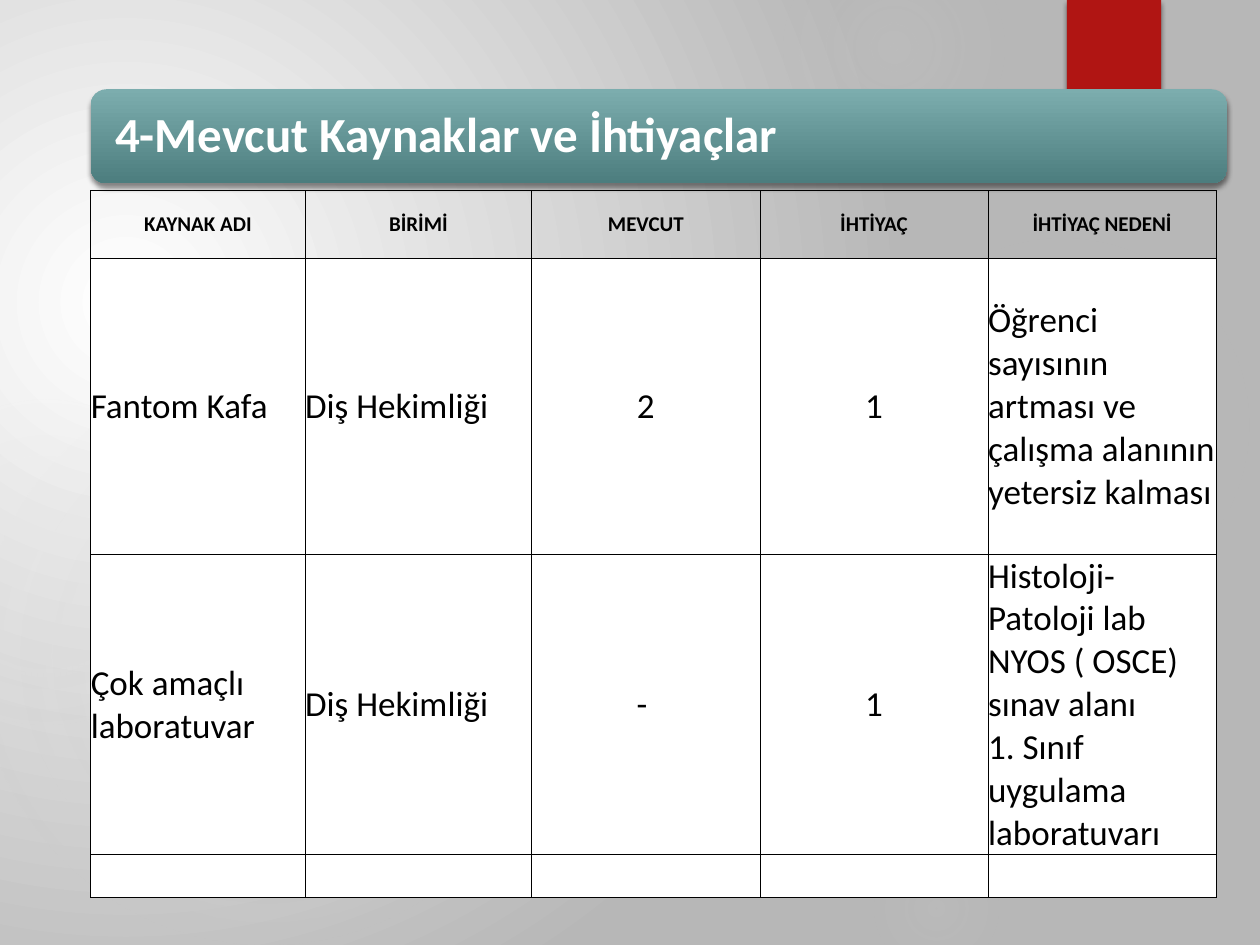
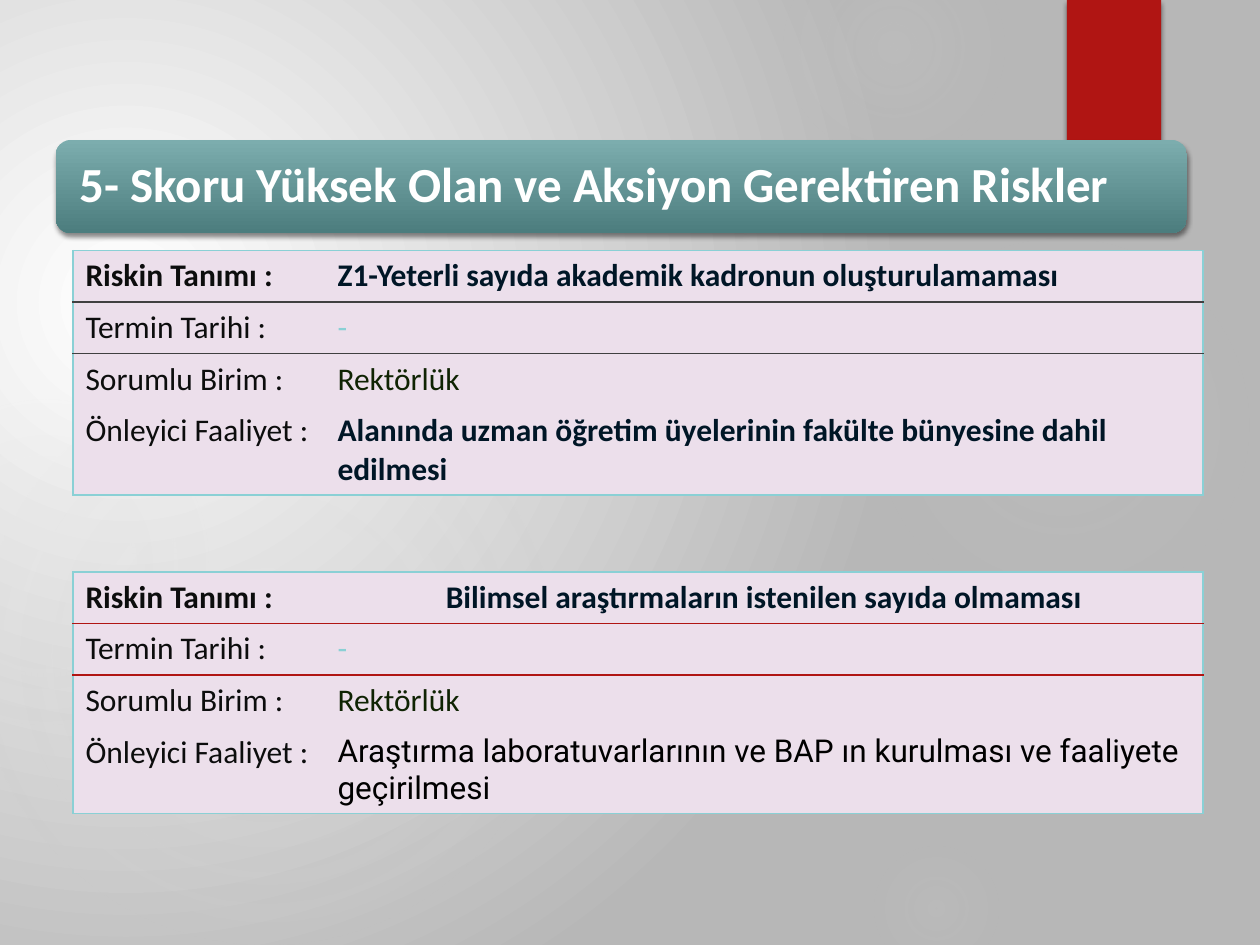
"""Build two slides: resources and needs, and the risks that call for action."""
from pptx import Presentation
from pptx.dml.color import RGBColor
from pptx.enum.shapes import MSO_SHAPE
from pptx.enum.text import MSO_ANCHOR, PP_ALIGN
from pptx.oxml import parse_xml
from pptx.oxml.ns import nsdecls, qn
from pptx.util import Cm, Pt

COLORS = {
    "white": "FFFFFF", "gray": "B7B7B7", "glow": "D9D9D9", "red": "B01513",
    "teal": "7CADAE", "deep_teal": "4C7D7E", "black": "000000", "ink": "0C0D0D",
    "navy": "001626", "green": "0F2303", "aqua": "8AD0D5", "lilac": "ECDFEB",
    "charcoal": "404040",
}
FONT = "Calibri"
NO_STYLE = "{2D5ABB26-0587-4C30-8999-92F81FD0307C}"
CENTER = '<a:path path="circle"><a:fillToRect l="50000" t="50000" r="50000" b="50000"/></a:path>'
CORNER = '<a:path path="circle"><a:fillToRect l="45000" t="65000" r="125000" b="100000"/></a:path>'
DOWN = '<a:lin ang="5400000" scaled="0"/>'


def paint_gradient(fill, root, stops, shade):
    """Give a fill a gradient of (position, colour, opacity) stops."""
    fill.gradient()
    old = root.find(".//" + qn("a:gradFill"))
    gs = "".join(
        f'<a:gs pos="{pos * 1000}"><a:srgbClr val="{COLORS[color]}">'
        f'<a:alpha val="{alpha * 1000}"/></a:srgbClr></a:gs>'
        for pos, color, alpha in stops)
    old.getparent().replace(old, parse_xml(
        f'<a:gradFill {nsdecls("a")} rotWithShape="1"><a:gsLst>{gs}</a:gsLst>{shade}</a:gradFill>'))


def write_cell(cell, text, size, color, bold, edges, width, fill=None, font=FONT, align=None):
    """Set the borders, fill and text of a table cell."""
    tcPr = cell._tc.get_or_add_tcPr()
    for side in "LRTB":
        if side in edges:
            tcPr.append(parse_xml(
                f'<a:ln{side} {nsdecls("a")} w="{Pt(width)}"><a:solidFill>'
                f'<a:srgbClr val="{COLORS[edges[side]]}"/></a:solidFill></a:ln{side}>'))
    if fill:
        cell.fill.solid()
        cell.fill.fore_color.rgb = RGBColor.from_string(COLORS[fill])
    else:
        cell.fill.background()
    cell.text_frame.text = text
    for p in cell.text_frame.paragraphs:
        p.alignment = align
        for r in p.runs:
            r.font.name, r.font.size, r.font.bold = font, Pt(size), bold
            r.font.color.rgb = RGBColor.from_string(COLORS[color])


prs = Presentation()
prs.slide_width, prs.slide_height = Cm(25.4), Cm(19.05)

glows = [
    (17.5, 4.65, 7.82, ((0, 7), (36, 6), (69, 0))),
    (15.8, -1.27, 4.45, ((0, 14), (36, 7), (73, 0))),
    (17.5, 16.94, 2.74, ((0, 9), (36, 5), (66, 0))),
    (-0.43, 7.42, 11.63, ((0, 11), (36, 10), (75, 0))),
    (-2.34, 8.05, 6.55, ((0, 8), (36, 8), (72, 0))),
]
banners = [
    ("4-Mevcut Kaynaklar ve İhtiyaçlar", 1.83, 1.8, 22.91, 1.9),
    ("5- Skoru Yüksek Olan ve Aksiyon Gerektiren Riskler", 1.12, 2.82, 22.81, 1.88),
]
slides = []
for title, left, top, width, height in banners:
    s = prs.slides.add_slide(prs.slide_layouts[6])
    slides.append(s)
    paint_gradient(s.background.fill, s._element,
                   [(0, "white", 100), (100, "gray", 100)], CORNER)

    for x, y, size, stops in glows:
        sp = s.shapes.add_shape(MSO_SHAPE.OVAL, Cm(x), Cm(y), Cm(size), Cm(size))
        sp.shadow.inherit = False
        sp.line.fill.background()
        paint_gradient(sp.fill, sp._element, [(pos, "glow", alpha) for pos, alpha in stops], CENTER)

    tab = s.shapes.add_shape(MSO_SHAPE.RECTANGLE, Cm(21.51), 0, Cm(1.9), Cm(3.05))
    tab.fill.solid()
    tab.fill.fore_color.rgb = RGBColor.from_string(COLORS["red"])
    banner = s.shapes.add_shape(MSO_SHAPE.ROUNDED_RECTANGLE, Cm(left), Cm(top), Cm(width), Cm(height))
    paint_gradient(banner.fill, banner._element,
                   [(0, "teal", 100), (100, "deep_teal", 100)], DOWN)
    for sp in (tab, banner):
        sp.line.fill.background()
        sp.shadow.inherit = False
        sp._element.spPr.find(qn("a:effectLst")).append(parse_xml(
            f'<a:outerShdw {nsdecls("a")} blurRad="{Pt(3)}" dist="{Pt(2)}" dir="5400000" rotWithShape="0">'
            f'<a:srgbClr val="{COLORS["black"]}"><a:alpha val="45000"/></a:srgbClr></a:outerShdw>'))

    tf = banner.text_frame
    tf.word_wrap = True
    tf.vertical_anchor = MSO_ANCHOR.MIDDLE
    tf.margin_left = tf.margin_right = Cm(0.4)
    tf.text = title
    p = tf.paragraphs[0]
    p.alignment = PP_ALIGN.LEFT
    p.line_spacing = 0.9
    r = p.runs[0]
    r.font.name, r.font.size, r.font.bold = FONT, Pt(28), True
    r.font.color.rgb = RGBColor.from_string(COLORS["white"])

resources = [
    ("KAYNAK ADI", "BİRİMİ", "MEVCUT", "İHTİYAÇ", "İHTİYAÇ NEDENİ"),
    ("Fantom Kafa", "Diş Hekimliği", "2", "1",
     "Öğrenci sayısının artması ve çalışma alanının yetersiz kalması"),
    ("Çok amaçlı laboratuvar", "Diş Hekimliği", "- ", "1",
     "Histoloji- Patoloji lab\nNYOS ( OSCE) sınav alanı\n1. Sınıf uygulama laboratuvarı"),
    ("",) * 5,
]
frame = s = slides[0].shapes.add_table(4, 5, Cm(1.83), Cm(3.84), Cm(22.7), Cm(14.17))
table = frame.table
frame._element.find(".//" + qn("a:tableStyleId")).text = NO_STYLE
for column, width in zip(table.columns, (4.32, 4.57, 4.6, 4.6, 4.6)):
    column.width = Cm(width)
for row, height in zip(table.rows, (1.37, 5.97, 5.97, 0.86)):
    row.height = Cm(height)
for i, texts in enumerate(resources):
    for j, text in enumerate(texts):
        cell = table.cell(i, j)
        header = i == 0
        cell.margin_left = cell.margin_right = cell.margin_top = cell.margin_bottom = 0
        cell.vertical_anchor = MSO_ANCHOR.MIDDLE
        write_cell(cell, text, 12 if header else 20, "black", header,
                   dict.fromkeys("LRTB", "black"), 0.5,
                   fill=None if header else "white",
                   align=PP_ALIGN.CENTER if header or j in (2, 3) else PP_ALIGN.LEFT)

labels = ("Riskin Tanımı :", "Termin Tarihi :", "Sorumlu Birim :", "Önleyici Faaliyet :")
risks = [
    (5.05, "charcoal", PP_ALIGN.LEFT, "Z1-Yeterli sayıda akademik kadronun oluşturulamaması",
     ("Alanında uzman öğretim üyelerinin fakülte bünyesine dahil edilmesi", "navy", True, FONT)),
    (11.53, "red", PP_ALIGN.CENTER, "Bilimsel araştırmaların istenilen sayıda olmaması",
     ("Araştırma laboratuvarlarının ve BAP ın kurulması ve faaliyete geçirilmesi",
      "black", False, "Roboto")),
]
for top, rule, align, risk, action in risks:
    frame = slides[1].shapes.add_table(4, 2, Cm(1.47), Cm(top), Cm(22.78), Cm(4.16))
    table = frame.table
    frame._element.find(".//" + qn("a:tableStyleId")).text = NO_STYLE
    table.columns[0].width, table.columns[1].width = Cm(5.08), Cm(17.7)
    values = [(risk, "navy", True, FONT), ("-", "aqua", False, FONT),
              ("Rektörlük", "green", False, FONT), action]
    for i, (label, value) in enumerate(zip(labels, values)):
        for j, (text, color, bold, font) in enumerate([(label, "ink", i == 0, FONT), value]):
            edges = {"R" if j else "L": "aqua"}
            if i == 0:
                edges.update(T="aqua", B=rule)
            elif i == 1:
                edges["T"] = rule
            elif i == 3:
                edges["B"] = "aqua"
            write_cell(table.cell(i, j), text, 18, color, bold, edges, 1, "lilac", font,
                       align if (i, j) == (0, 1) else PP_ALIGN.LEFT)

prs.save("out.pptx")
